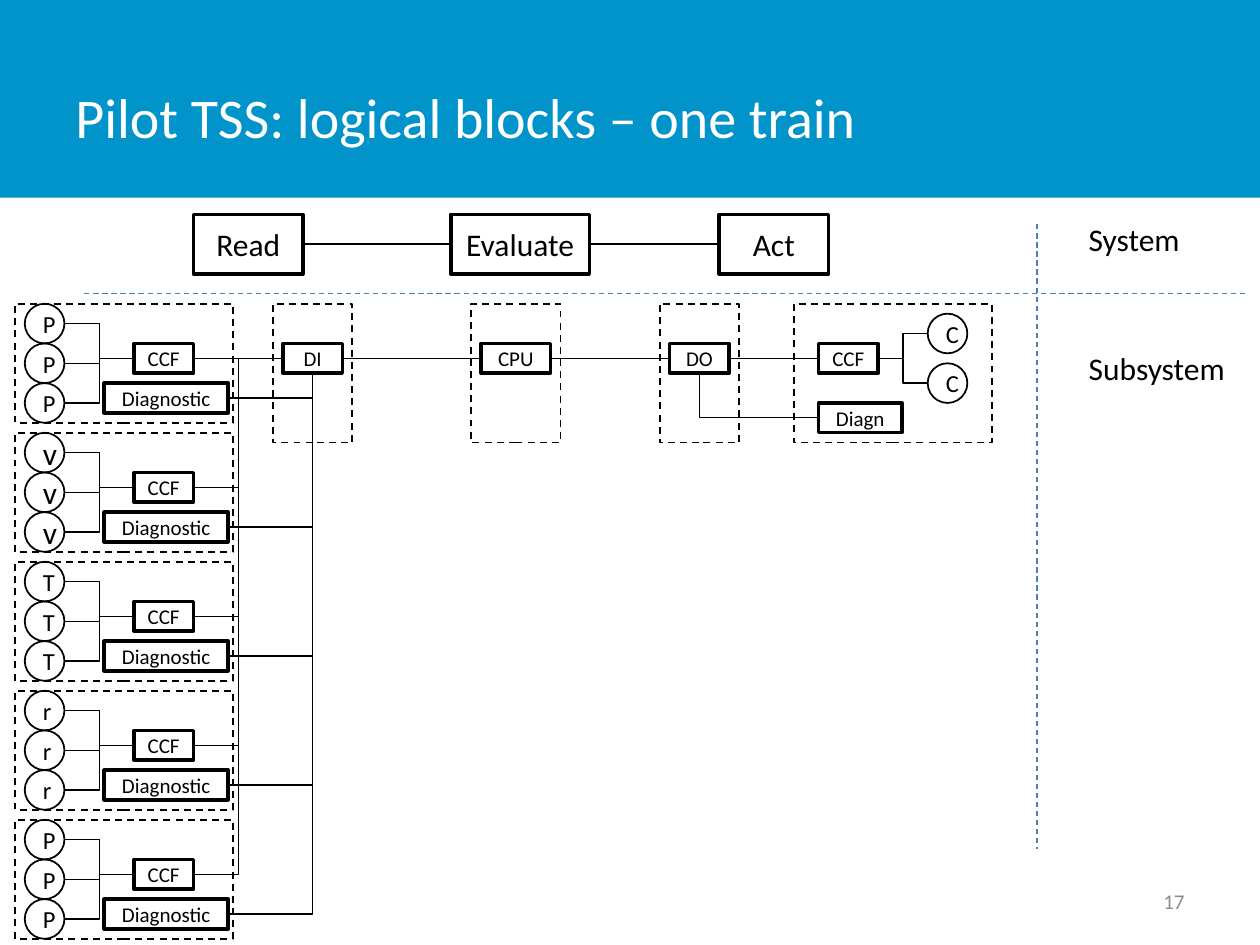
from dataclasses import dataclass

import pptx
import pptx.dml.color
import pptx.enum.dml
import pptx.enum.shapes
import pptx.enum.text
import pptx.oxml
import pptx.util
from pptx.util import Pt

SHAPE = pptx.enum.shapes.MSO_SHAPE
LINK = pptx.enum.shapes.MSO_CONNECTOR
ALIGN = pptx.enum.text.PP_ALIGN
ANCHOR = pptx.enum.text.MSO_ANCHOR
DASH = pptx.enum.dml.MSO_LINE.DASH


@dataclass(frozen=True)
class Theme:
    font: str = "Calibri"
    banner: str = "0094CA"
    white: str = "FFFFFF"
    ink: str = "000000"
    divider: str = "4B7EBC"
    muted: str = "8C8C8C"
    title: int = 32
    level: int = 18
    sensor: int = 14
    small: int = 12


THEME = Theme()
UNIT = 5.67  # the diagram sits on a 2 mm grid


@dataclass(frozen=True)
class Box:
    left: float
    top: float
    width: float
    height: float

    @property
    def right(self):
        return self.left + self.width

    @property
    def bottom(self):
        return self.top + self.height

    @property
    def center(self):
        return self.left + self.width / 2

    @property
    def middle(self):
        return self.top + self.height / 2

    def cell(self, column, row, columns, rows):
        """Return a box placed in grid units from this box's corner."""
        return Box(self.left + column * UNIT, self.top + row * UNIT,
                   columns * UNIT, rows * UNIT)

    def lengths(self):
        return [Pt(value) for value in (self.left, self.top, self.width, self.height)]


def color(code):
    return pptx.dml.color.RGBColor.from_string(code)


def write(frame, text, size, ink=THEME.ink, align=ALIGN.LEFT, anchor=ANCHOR.MIDDLE):
    frame.vertical_anchor = anchor
    para = frame.paragraphs[0]
    para.alignment = align
    span = para.add_run()
    span.text = text
    span.font.name = THEME.font
    span.font.size = Pt(size)
    span.font.color.rgb = color(ink)


def add_label(page, box, text, size, wrap=True, **style):
    frame = page.shapes.add_textbox(*box.lengths()).text_frame
    frame.word_wrap = wrap
    write(frame, text, size, **style)


def add_outline(page, box, weight, kind=SHAPE.RECTANGLE, text="", size=THEME.small):
    shape = page.shapes.add_shape(kind, *box.lengths())
    shape.shadow.inherit = False
    shape.fill.background()
    shape.line.color.rgb = color(THEME.ink)
    shape.line.width = Pt(weight)
    if text:
        write(shape.text_frame, text, size, align=ALIGN.CENTER)
    return shape


def add_block(page, box, text, size=THEME.small):
    add_outline(page, box, 2, text=text, size=size)
    return box


def add_sensor(page, box, text, size=THEME.sensor):
    add_outline(page, box, 1, SHAPE.OVAL, text, size)
    return box


def add_frame(page, box):
    add_outline(page, box, 1).line.dash_style = DASH


def add_link(page, start, end, kind=LINK.STRAIGHT, ink=THEME.ink):
    link = page.shapes.add_connector(kind, *[Pt(value) for value in (*start, *end)])
    link.line.color.rgb = color(ink)
    link.line.width = Pt(0.75)
    properties = link._element.spPr
    properties.append(pptx.oxml.parse_xml(
        '<a:effectLst xmlns:a="http://schemas.openxmlformats.org/drawingml/2006/main"/>'))
    return link


def add_corner(page, start, end):
    """Link that runs across, then turns once."""
    link = add_link(page, start, end, LINK.ELBOW)
    link._element.xpath(".//a:prstGeom")[0].set("prst", "bentConnector2")


def join(page, first, second):
    add_link(page, (first.right, first.middle), (second.left, second.middle))


def draw_banner(page, box):
    banner = page.shapes.add_shape(SHAPE.RECTANGLE, *box.lengths())
    banner.shadow.inherit = False
    banner.fill.solid()
    banner.fill.fore_color.rgb = color(THEME.banner)
    banner.line.fill.background()
    add_label(page, Box(box.left + 36, box.top + 21.6, 562, 90),
              "Pilot TSS: logical blocks – one train", THEME.title, ink=THEME.white)


def draw_system(page, box):
    stages = [("Read", 0, 62.6), ("Evaluate", 147, 79.2), ("Act", 300.3, 62.6)]
    blocks = [add_block(page, Box(box.left + offset, box.top, width, box.height),
                        text, THEME.level)
              for text, offset, width in stages]
    for first, second in zip(blocks, blocks[1:]):
        join(page, first, second)


def draw_levels(page, box):
    """Dashed dividers with the names of the two levels."""
    for start, end in [((592.6, 128.2), (592.6, 485.3)),
                       ((box.left, 167.8), (box.right, 167.8))]:
        add_link(page, start, end, ink=THEME.divider).line.dash_style = DASH
    for text, top, width in [("System", 122.4, 67), ("Subsystem", 195.8, 93)]:
        add_label(page, Box(615, top, width, 29), text, THEME.level,
                  wrap=False, anchor=ANCHOR.TOP)


def draw_unit(page, box, text):
    """Framed processing block; returns the block."""
    add_frame(page, box)
    return add_block(page, box.cell(1, 4, box.width / UNIT - 2, 3), text)


def draw_reader(page, box, letter, size, unit):
    """Three sensors with voting and diagnostics, wired to the input unit."""
    add_frame(page, box)
    voter = add_block(page, box.cell(12, 4, 6, 3), "CCF")
    for row in (0, 4, 8):
        sensor = add_sensor(page, box.cell(1, row, 4, 4), letter, size)
        add_link(page, (sensor.right, sensor.middle), (voter.left, voter.middle), LINK.ELBOW)
    diagnostic = add_block(page, box.cell(9, 8, 12.5, 3), "Diagnostic")
    kind = LINK.STRAIGHT if voter.middle == unit.middle else LINK.ELBOW
    add_link(page, (voter.right, voter.middle), (unit.left, unit.middle), kind)
    add_corner(page, (diagnostic.right, diagnostic.middle), (unit.center, unit.bottom))


def draw_actuator(page, box, unit):
    add_frame(page, box)
    voter = add_block(page, box.cell(2.5, 4, 6, 3), "CCF")
    for row in (1, 6):
        contact = add_sensor(page, box.cell(13.5, row, 4, 4), "C")
        add_link(page, (contact.left, contact.middle), (voter.right, voter.middle), LINK.ELBOW)
    diagnostic = add_block(page, box.cell(2.5, 10, 8.4, 3), "Diagn")
    join(page, unit, voter)
    add_corner(page, (diagnostic.left, diagnostic.middle), (unit.center, unit.bottom))


def draw_subsystem(page, box):
    units = [draw_unit(page, Box(left, box.top, columns * UNIT, 14 * UNIT), text)
             for text, left, columns in [("DI", 156, 8), ("CPU", 269.3, 9), ("DO", 377, 8)]]
    for first, second in zip(units, units[1:]):
        join(page, first, second)
    readers = [("P", THEME.sensor), ("v", THEME.level), ("T", THEME.sensor),
               ("r", THEME.sensor), ("P", THEME.sensor)]
    for index, (letter, size) in enumerate(readers):
        draw_reader(page, box.cell(0, 13 * index, 22, 12), letter, size, units[0])
    draw_actuator(page, Box(453.6, box.top, 20 * UNIT, 14 * UNIT), units[-1])


def main():
    deck = pptx.Presentation()
    deck.slide_width, deck.slide_height = Pt(720), Pt(540)
    page = deck.slides.add_slide(deck.slide_layouts[6])
    draw_banner(page, Box(0, 0, 720, 113))
    draw_system(page, Box(110.6, 122.5, 363, 34))
    draw_levels(page, Box(48.2, 122.4, 663.2, 363))
    draw_subsystem(page, Box(8.5, 173.6, 558, 363))
    add_label(page, Box(516, 500.5, 168, 28.8), "17", THEME.small,
              ink=THEME.muted, align=ALIGN.RIGHT)
    deck.save("out.pptx")


if __name__ == "__main__":
    main()
